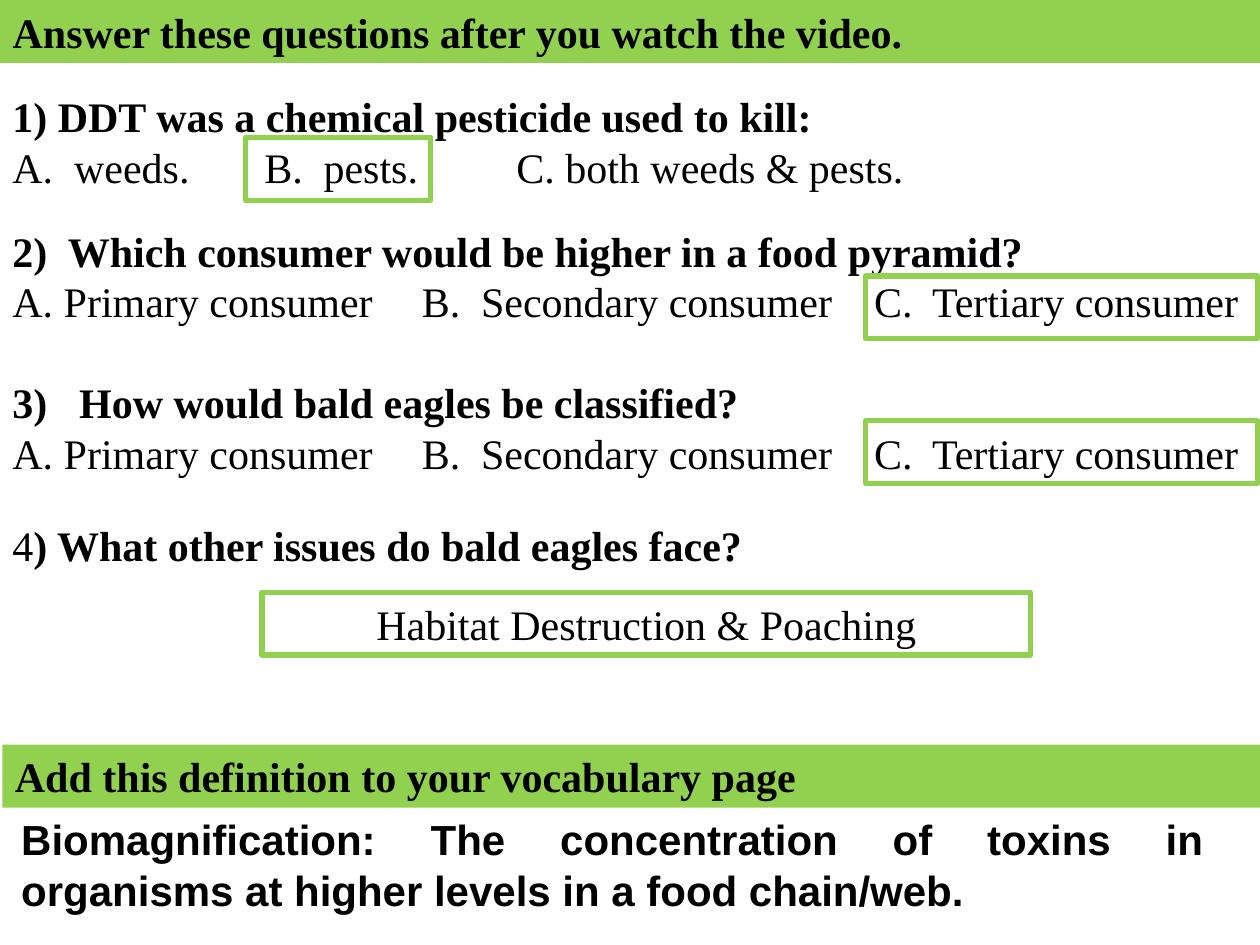
from lxml.etree import SubElement
from pptx import Presentation
from pptx.dml.color import RGBColor
from pptx.enum.shapes import MSO_SHAPE
from pptx.enum.text import MSO_ANCHOR, MSO_AUTO_SIZE, PP_ALIGN
from pptx.oxml.ns import qn
from pptx.util import Inches, Pt

GREEN = RGBColor(0x92, 0xD0, 0x50)
BLACK = RGBColor(0, 0, 0)
SERIF = "Times New Roman"


def place(shape, left, top, width, height, anchor=MSO_ANCHOR.MIDDLE):
    """Position a shape and prepare its text frame."""
    shape.left, shape.top = Inches(left), Inches(top)
    shape.width, shape.height = Inches(width), Inches(height)
    frame = shape.text_frame
    frame.word_wrap = True
    frame.auto_size = MSO_AUTO_SIZE.NONE
    frame.vertical_anchor = anchor
    return frame


def write(para, spans, font=SERIF, align=PP_ALIGN.LEFT, before=0):
    """Fill a paragraph from (text, bold) pairs."""
    para.alignment = align
    para.line_spacing = Pt(28.8)
    para.space_before = Pt(before)
    for text, bold in spans:
        span = para.add_run()
        span.text = text
        span.font.name = font
        span.font.size = Pt(24)
        span.font.bold = bold
        span.font.color.rgb = BLACK


deck = Presentation()
deck.slide_width, deck.slide_height = Inches(10), Inches(7.5)
page = deck.slides.add_slide(deck.slide_layouts[5])
title = page.shapes.title

# Questions: spans, space before in points, tab stops in inches.
# A text box, because the body placeholder's hanging indent overrides tab stops.
consumers = [("A. Primary consumer\tB.\tSecondary consumer\tC.\tTertiary consumer", False)]
consumer_tabs = [3.25, 3.72, 6.84, 7.3]
questions = [
    ([("1) DDT was a chemical pesticide used to kill:", True)], 0, []),
    ([("A.\tweeds.\tB.\tpests.\tC. both weeds & pests.", False)], 0, [0.49, 2, 2.47, 4]),
    ([("2)\tWhich consumer would be higher in a food pyramid?", True)], 19.4, [0.44]),
    (consumers, 0, consumer_tabs),
    ([("3)\tHow would bald eagles be classified?", True)], 29, [0.53]),
    (consumers, 0, consumer_tabs),
    ([("4", False), (") What other issues do bald eagles face?", True)], 24, []),
]
quiz = page.shapes.add_textbox(0, 0, 0, 0)
frame = place(quiz, 0, 0.67, 9.97, 3.89, MSO_ANCHOR.TOP)
for index, (spans, before, tabs) in enumerate(questions):
    para = frame.add_paragraph() if index else frame.paragraphs[0]
    write(para, spans, before=before)
    if tabs:
        stops = SubElement(para._p.get_or_add_pPr(), qn("a:tabLst"))
        for tab in tabs:
            SubElement(stops, qn("a:tab"), pos=str(Inches(tab)), algn="l")

# Green heading bars
vocabulary = page.shapes.add_shape(MSO_SHAPE.RECTANGLE, 0, 0, 0, 0)
vocabulary.shadow.inherit = False
vocabulary.line.fill.background()
for bar, left, top, text in [
    (title, 0, 0, "Answer these questions after you watch the video."),
    (vocabulary, 0.02, 5.91, "Add this definition to your vocabulary page"),
]:
    frame = place(bar, left, top, 10, 0.5)
    bar.fill.solid()
    bar.fill.fore_color.rgb = GREEN
    write(frame.paragraphs[0], [(text, True)])

definition = page.shapes.add_textbox(0, 0, 0, 0)
frame = place(definition, 0.07, 6.41, 9.58, 0.91, MSO_ANCHOR.TOP)
write(
    frame.paragraphs[0],
    [("Biomagnification: The concentration of toxins in organisms "
      "at higher levels in a food chain/web.", True)],
    font="Arial", align=PP_ALIGN.JUSTIFY,
)

# Outlines around the correct answers
for left, top, width, answer in [
    (1.95, 1.09, 1.47, ""),
    (6.87, 2.19, 3.11, ""),
    (6.87, 3.34, 3.11, ""),
    (2.08, 4.7, 6.1, "Habitat Destruction & Poaching"),
]:
    outline = page.shapes.add_shape(MSO_SHAPE.RECTANGLE, 0, 0, 0, 0)
    frame = place(outline, left, top, width, 0.5)
    outline.shadow.inherit = False
    outline.fill.background()
    outline.line.color.rgb = GREEN
    outline.line.width = Pt(3)
    if answer:
        write(frame.paragraphs[0], [(answer, False)], align=PP_ALIGN.CENTER)

deck.save("out.pptx")
